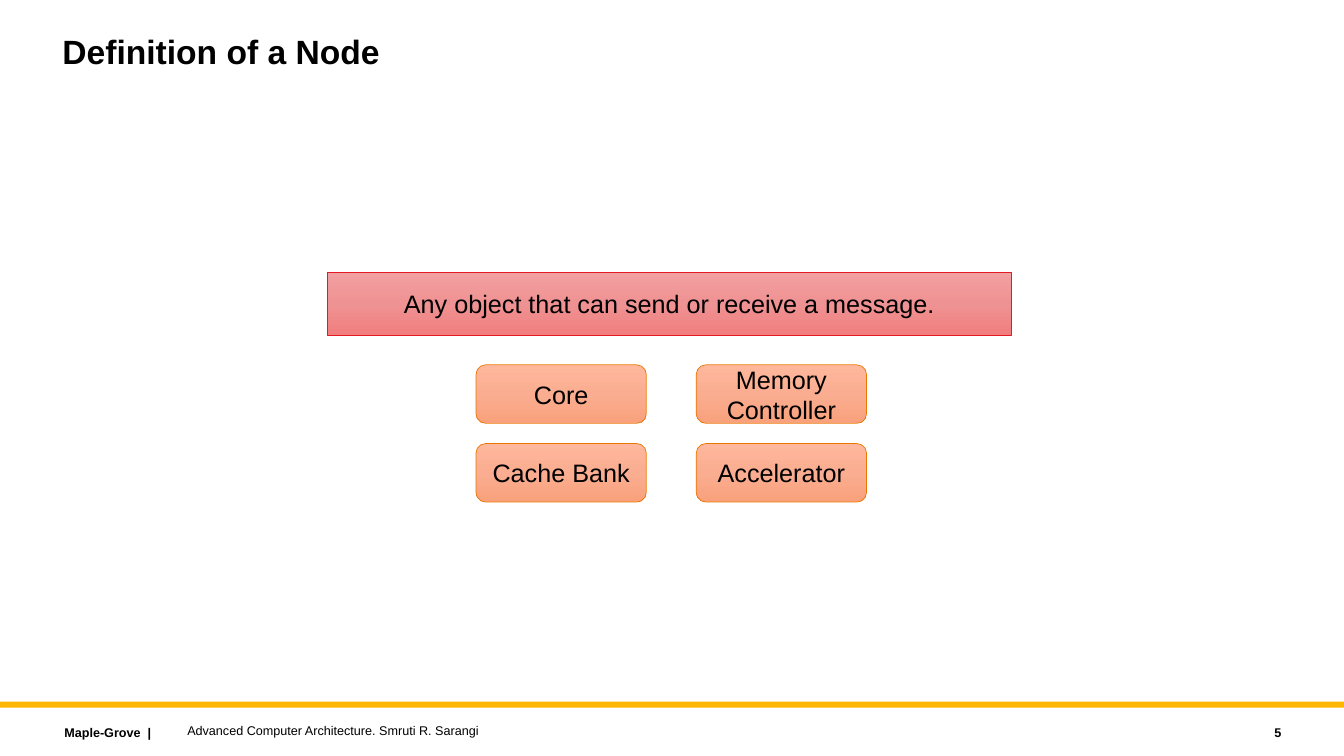
import copy
from lxml import etree
from pptx import Presentation
from pptx import util as u
from pptx.dml.color import RGBColor
from pptx.enum import shapes, text
from pptx.oxml.ns import qn

Pt = u.Pt
COLORS = {
    "ink": "000000",
    "gold": "FFB600",
    "red_line": "E21A23",
    "orange_line": "EC7700",
    "red_top": "F2A0A1",
    "red_mid": "EF9293",
    "red_end": "F27D7E",
    "orange_top": "FFB89D",
    "orange_mid": "FAAD90",
    "orange_end": "F9A17C",
}
RECT = shapes.MSO_SHAPE.RECTANGLE
ROUNDED = shapes.MSO_SHAPE.ROUNDED_RECTANGLE
LEFT, CENTER, RIGHT = text.PP_ALIGN.LEFT, text.PP_ALIGN.CENTER, text.PP_ALIGN.RIGHT
TOP, MIDDLE = text.MSO_ANCHOR.TOP, text.MSO_ANCHOR.MIDDLE


def rgb(name):
    return RGBColor.from_string(COLORS[name])


def write(sp, words, size, bold=False, align=LEFT, anchor=TOP, tab=None):
    tf = sp.text_frame
    tf.word_wrap = True
    tf.vertical_anchor = anchor
    p = tf.paragraphs[0]
    p.alignment = align
    if tab:
        tabs = etree.SubElement(p._p.get_or_add_pPr(), qn("a:tabLst"))
        etree.SubElement(tabs, qn("a:tab"), pos=str(Pt(tab)), algn="l")
    r = p.add_run()
    r.text = words
    for key, value in {"name": "Arial", "size": Pt(size), "bold": bold}.items():
        setattr(r.font, key, value)
    r.font.color.rgb = rgb("ink")
    return p


def add_label(s, box, words, size, **style):
    return write(s.shapes.add_textbox(*map(Pt, box)), words, size, **style)


def add_panel(s, box, kind, tone, words):
    sp = s.shapes.add_shape(kind, *map(Pt, box))
    sp.shadow.inherit = False
    sp.fill.gradient()
    sp.fill.gradient_angle = 270
    first = sp._element.spPr.find(".//" + qn("a:gs"))
    first.addnext(copy.deepcopy(first))
    for i, stop in enumerate(sp.fill.gradient_stops):
        stop.position = i / 2
        stop.color.rgb = rgb(f"{tone}_{('top', 'mid', 'end')[i]}")
    sp.line.color.rgb = rgb(f"{tone}_line")
    sp.line.width = Pt(0.5)
    write(sp, words, 18, align=CENTER, anchor=MIDDLE)


def add_examples(s, box, rows):
    left, top, width, height = box
    w, h = 121.7, 41.8
    for i, row in enumerate(rows):
        for j, words in enumerate(row):
            x = left + j * (width - w)
            y = top + i * (height - h)
            add_panel(s, (x, y, w, h), ROUNDED, "orange", words)


def add_definition(s, box):
    left, top, width, height = box
    add_panel(s, (left, top, width, 45.4), RECT, "red",
              "Any object that can send or receive a message.")
    add_examples(s, (left + 106, top + 66.2, 279, height - 66.2),
                 [("Core", "Memory Controller"), ("Cache Bank", "Accelerator")])


def add_footer(s, box):
    left, top, width, height = box
    bar = s.shapes.add_shape(RECT, *map(Pt, (left, top, width, 4.3)))
    bar.shadow.inherit = False
    bar.fill.solid()
    bar.fill.fore_color.rgb = rgb("gold")
    bar.line.fill.background()
    y = top + 13
    add_label(s, (left + 38.9, y, 163.4, 18), "Maple-Grove\t|", 9, bold=True, tab=59.5)
    add_label(s, (left + 126.7, y - 1.5, 576, 18),
              "Advanced Computer Architecture. Smruti R. Sarangi", 9, anchor=MIDDLE)
    add_label(s, (left + width - 138.4, y, 100.8, 18), "5", 9,
              bold=True, align=RIGHT, anchor=MIDDLE)


def add_title(s, box):
    p = add_label(s, box, "Definition of a Node", 24, bold=True)
    p.line_spacing = 0.9


def main():
    prs = Presentation()
    prs.slide_width, prs.slide_height = Pt(960), Pt(540)
    s = prs.slides.add_slide(prs.slide_layouts[6])
    add_footer(s, (0, 501.1, 960, 38.9))
    add_title(s, (37.5, 21.6, 720, 64.8))
    add_definition(s, (234, 194.4, 488.2, 164.2))
    prs.save("out.pptx")


if __name__ == "__main__":
    main()
